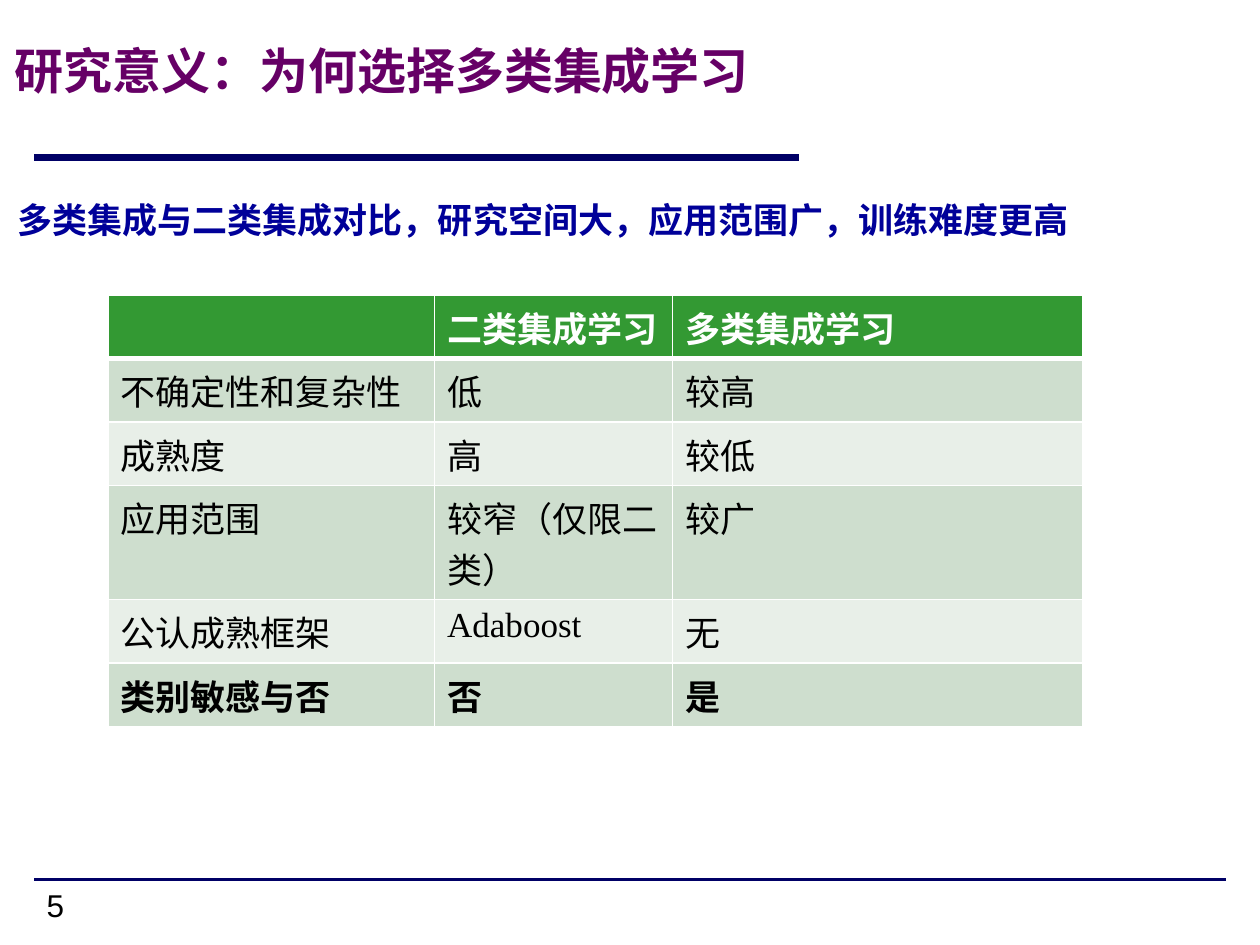
from lxml.etree import SubElement
from pptx import Presentation
from pptx.dml.color import RGBColor
from pptx.enum.shapes import MSO_CONNECTOR
from pptx.enum.text import MSO_ANCHOR
from pptx.oxml import parse_xml
from pptx.oxml.ns import nsdecls, qn
from pptx.util import Cm, Pt

COLORS = {
    "title": "660066", "subtitle": "000099", "rule": "000066",
    "header": "339933", "odd": "CEDECE", "even": "E8EFE8",
    "white": "FFFFFF", "black": "000000",
}

# text, (left, top, width, height) in cm, anchor, font
TEXTS = [
    ("5", (0.69, 17.73, 5.92, 1.32), MSO_ANCHOR.TOP,
     {"size": 18, "name": "Arial", "color": "black"}),
    ("研究意义：为何选择多类集成学习", (0.05, 0.13, 23.24, 2.57), MSO_ANCHOR.MIDDLE,
     {"size": 28, "name": "Arial", "color": "title", "bold": True}),
    ("多类集成与二类集成对比，研究空间大，应用范围广，训练难度更高",
     (0.1, 3.15, 24.71, 2.57), MSO_ANCHOR.MIDDLE,
     {"size": 20, "name": "Times New Roman", "color": "subtitle", "bold": True}),
]

# left, right, y in cm, width in points
RULES = [(0.69, 16.1, 3.18, 4), (0.69, 24.71, 17.73, 2)]

TABLE_AT = (2.18, 5.95)
COL_WIDTHS = (6.58, 4.8, 8.27)
ONE_LINE, TWO_LINES = 1.28, 2.3
ROWS = [
    ("", "二类集成学习", "多类集成学习"),
    ("不确定性和复杂性", "低", "较高"),
    ("成熟度", "高", "较低"),
    ("应用范围", "较窄（仅限二类）", "较广"),
    ("公认成熟框架", "Adaboost", "无"),
    ("类别敏感与否", "否", "是"),
]
ROW_HEIGHTS = [TWO_LINES if row[0] == "应用范围" else ONE_LINE for row in ROWS]
BOLD_ROWS = (0, len(ROWS) - 1)


def rgb(name):
    return RGBColor.from_string(COLORS[name])


def write(tf, text, fmt):
    r = tf.paragraphs[0].add_run()
    r.text = text
    for key, value in fmt.items():
        if key == "color":
            r.font.color.rgb = rgb(value)
        else:
            setattr(r.font, key, Pt(value) if key == "size" else value)


def add_text(s, text, box, anchor, fmt):
    tf = s.shapes.add_textbox(*map(Cm, box)).text_frame
    tf.word_wrap = True
    tf.vertical_anchor = anchor
    write(tf, text, fmt)


def add_rule(s, left, right, y, width):
    line = s.shapes.add_connector(MSO_CONNECTOR.STRAIGHT, Cm(left), Cm(y), Cm(right), Cm(y))
    line.line.color.rgb = rgb("rule")
    line.line.width = Pt(width)
    SubElement(line._element.spPr, qn("a:effectLst"))


def set_borders(cell, widths):
    """Put white borders, given as side: points, ahead of the cell's fill."""
    tc_pr = cell._tc.get_or_add_tcPr()
    for i, (side, width) in enumerate(widths.items()):
        tc_pr.insert(i, parse_xml(
            f'<a:ln{side} {nsdecls("a")} w="{Pt(width)}"><a:solidFill>'
            f'<a:srgbClr val="{COLORS["white"]}"/></a:solidFill></a:ln{side}>'))


def add_comparison(s):
    size = (sum(COL_WIDTHS), sum(ROW_HEIGHTS))
    table = s.shapes.add_table(len(ROWS), len(COL_WIDTHS), *map(Cm, TABLE_AT + size)).table
    for col, width in zip(table.columns, COL_WIDTHS):
        col.width = Cm(width)
    for i, (row, height) in enumerate(zip(ROWS, ROW_HEIGHTS)):
        table.rows[i].height = Cm(height)
        fill = "header" if i == 0 else "odd" if i % 2 else "even"
        fmt = {"size": 20, "name": "Times New Roman", "bold": i in BOLD_ROWS,
               "color": "white" if i == 0 else "black"}
        borders = {"L": 1, "R": 1, "T": 3 if i == 1 else 1, "B": 3 if i == 0 else 1}
        for j, text in enumerate(row):
            cell = table.cell(i, j)
            cell.fill.solid()
            cell.fill.fore_color.rgb = rgb(fill)
            set_borders(cell, borders)
            if text:
                write(cell.text_frame, text, fmt)


def main():
    prs = Presentation()
    prs.slide_width, prs.slide_height = Cm(25.4), Cm(19.05)
    s = prs.slides.add_slide(prs.slide_layouts[6])
    for rule in RULES:
        add_rule(s, *rule)
    for text in TEXTS:
        add_text(s, *text)
    add_comparison(s)
    prs.save("out.pptx")


if __name__ == "__main__":
    main()
